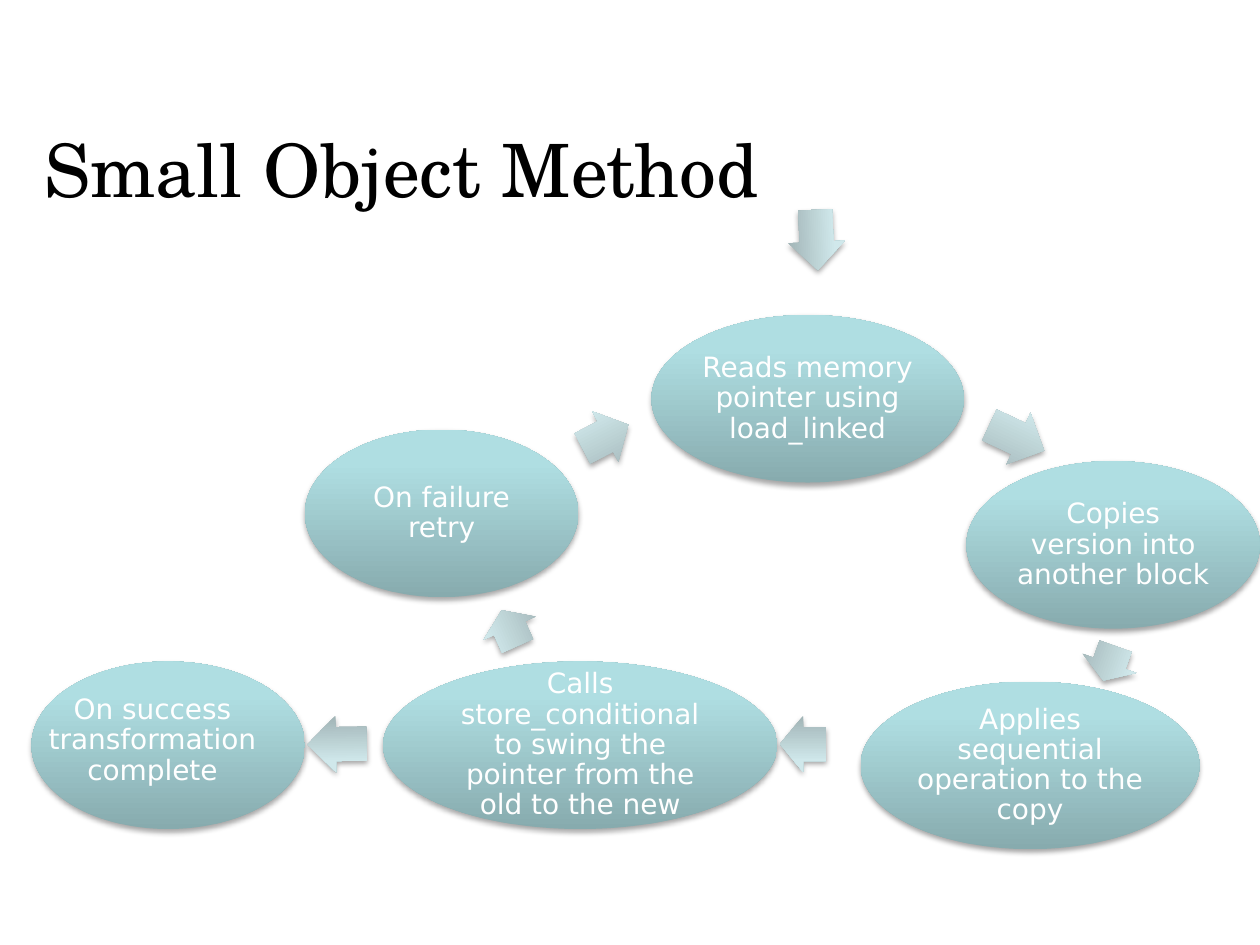
from lxml import etree
from pptx import Presentation
from pptx.dml.color import RGBColor
from pptx.enum.shapes import MSO_SHAPE
from pptx.enum.text import MSO_ANCHOR, PP_ALIGN
from pptx.oxml.ns import qn
from pptx.util import Inches, Pt

ELLIPSE = MSO_SHAPE.OVAL
ARROW = MSO_SHAPE.RIGHT_ARROW
MIDDLE = MSO_ANCHOR.MIDDLE
CENTER = PP_ALIGN.CENTER
LEFT = PP_ALIGN.LEFT

SLIDE_WIDTH, SLIDE_HEIGHT = 10, 7.5
STEP_HEIGHT = 1.33
ARROW_HEIGHT = 0.45
INSCRIBED = 0.5 ** 0.5
INSET = 0.02
TITLE = "Small Object Method"
TITLE_FONT, BODY_FONT = "TeX Gyre Schola", "DejaVu Sans"
COLORS = {"title": "000000", "label": "FFFFFF", "shadow": "000000"}
STEP_GRADIENT = [(0, "87ABAE"), (80, "AFDEE2"), (100, "AFE0E4")]
ARROW_GRADIENT = [(0, "A0B3B5"), (80, "D0E8EB"), (100, "D1EAEC")]

# text, left, top, width
STEPS = [
    ("Reads memory pointer using load_linked", 5.17, 2.5, 2.48),
    ("Copies version into another block", 7.67, 3.66, 2.33),
    ("Applies sequential operation to the copy", 6.83, 5.41, 2.69),
    ("Calls store_conditional to swing the pointer from the old to the new",
     3.04, 5.25, 3.13),
    ("On success transformation complete", 0.25, 5.25, 2.17),
    ("On failure retry", 2.42, 3.41, 2.17),
]
LABEL_BOXES = {"On success transformation complete": (0.25, 5.41, 1.92, 0.94)}

# left, top, width, rotation
ARROWS = [
    (6.24, 1.68, 0.48, 87.3),
    (7.83, 3.25, 0.48, 25.1),
    (8.66, 5.04, 0.29, 109.7),
    (6.19, 5.68, 0.37, 180),
    (2.44, 5.68, 0.47, 179.2),
    (3.89, 4.76, 0.31, 246),
    (4.6, 3.24, 0.41, 332.6),
]


def add_child(parent, tag, **attributes):
    values = {name: str(value) for name, value in attributes.items()}
    return etree.SubElement(parent, qn(tag), values)


def style_shape(shape, stops):
    shape.line.fill.background()
    shape.fill.gradient()
    shape.fill.gradient_angle = 90
    properties = shape._element.spPr
    gradient = properties.find(qn("a:gradFill"))
    gradient.set("rotWithShape", "1")
    stop_list = gradient.find(qn("a:gsLst"))
    for old_stop in list(stop_list):
        stop_list.remove(old_stop)
    for position, color in stops:
        stop = add_child(stop_list, "a:gs", pos=position * 1000)
        add_child(stop, "a:srgbClr", val=color)

    shape.shadow.inherit = False
    effects = properties.find(qn("a:effectLst"))
    shadow = add_child(effects, "a:outerShdw", blurRad=Pt(3.1), dist=Pt(1.8),
                       dir=90 * 60000, rotWithShape=0)
    color = add_child(shadow, "a:srgbClr", val=COLORS["shadow"])
    add_child(color, "a:alpha", val=35000)


def set_text(shape, text, font_name, size, color, alignment):
    frame = shape.text_frame
    frame.text = text
    frame.word_wrap = True
    frame.vertical_anchor = MIDDLE
    paragraph = frame.paragraphs[0]
    paragraph.alignment = alignment
    paragraph.line_spacing = 0.9
    font = paragraph.runs[0].font
    font.name = font_name
    font.size = Pt(size)
    font.color.rgb = RGBColor.from_string(color)


def add_step(slide, text, left, top, width):
    group = slide.shapes.add_group_shape()
    box = [Inches(value) for value in (left, top, width, STEP_HEIGHT)]
    style_shape(group.shapes.add_shape(ELLIPSE, *box), STEP_GRADIENT)

    label_width, label_height = width * INSCRIBED, STEP_HEIGHT * INSCRIBED
    inscribed_box = (left + (width - label_width) / 2,
                     top + (STEP_HEIGHT - label_height) / 2,
                     label_width, label_height)
    label_box = LABEL_BOXES.get(text, inscribed_box)
    label = group.shapes.add_textbox(*[Inches(value) for value in label_box])
    frame = label.text_frame
    frame.margin_left = frame.margin_right = Inches(INSET)
    frame.margin_top = frame.margin_bottom = Inches(INSET)
    set_text(label, text, BODY_FONT, 16, COLORS["label"], CENTER)


def add_arrow(slide, left, top, width, rotation):
    box = [Inches(value) for value in (left, top, width, ARROW_HEIGHT)]
    arrow = slide.shapes.add_shape(ARROW, *box)
    arrow.adjustments[0] = 0.6
    arrow.adjustments[1] = 0.5
    arrow.rotation = rotation
    style_shape(arrow, ARROW_GRADIENT)


def main():
    presentation = Presentation()
    presentation.slide_width = Inches(SLIDE_WIDTH)
    presentation.slide_height = Inches(SLIDE_HEIGHT)
    slide = presentation.slides.add_slide(presentation.slide_layouts[5])

    title = slide.shapes.title
    title.left, title.top = Inches(0.25), Inches(1)
    title.width, title.height = Inches(7.92), Inches(0.75)
    set_text(title, TITLE, TITLE_FONT, 42, COLORS["title"], LEFT)

    for step in STEPS:
        add_step(slide, *step)
    for arrow in ARROWS:
        add_arrow(slide, *arrow)
    presentation.save("out.pptx")


if __name__ == "__main__":
    main()
